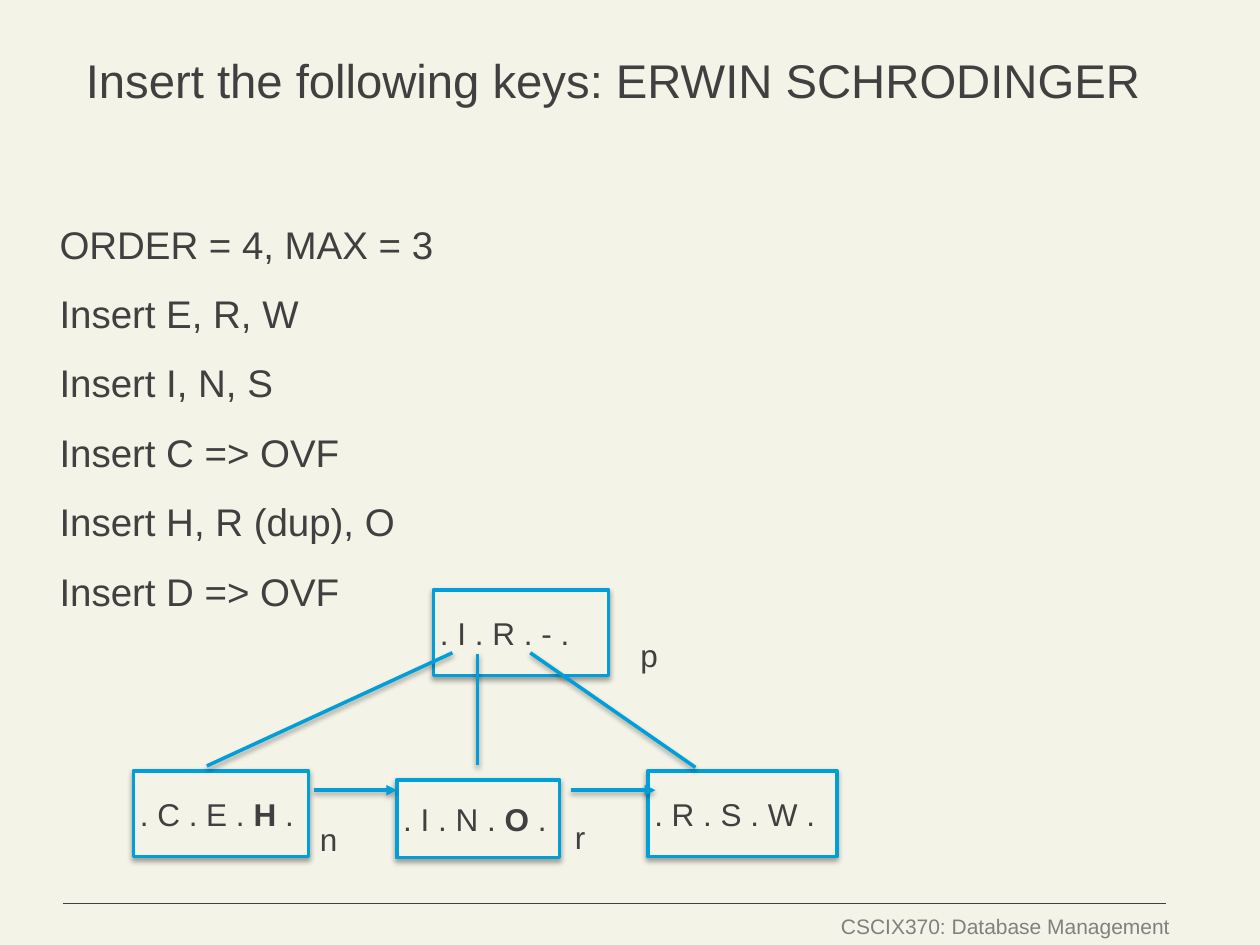
from dataclasses import dataclass

from lxml import etree
from pptx import Presentation
from pptx.dml.color import RGBColor
from pptx.enum.shapes import MSO_CONNECTOR, MSO_SHAPE
from pptx.enum.text import MSO_ANCHOR, MSO_AUTO_SIZE, PP_ALIGN
from pptx.oxml.ns import qn
from pptx.util import Cm, Pt

RECTANGLE, STRAIGHT = MSO_SHAPE.RECTANGLE, MSO_CONNECTOR.STRAIGHT
TOP, MIDDLE = MSO_ANCHOR.TOP, MSO_ANCHOR.MIDDLE
LEFT, RIGHT = PP_ALIGN.LEFT, PP_ALIGN.RIGHT
NO_RESIZE = MSO_AUTO_SIZE.NONE


@dataclass(frozen=True)
class Theme:
    font: str = "Arial"
    paper: RGBColor = RGBColor(0xF3, 0xF3, 0xE7)
    ink: RGBColor = RGBColor(0x40, 0x40, 0x40)
    muted: RGBColor = RGBColor(0x80, 0x80, 0x80)
    accent: RGBColor = RGBColor(0x00, 0x9F, 0xDA)
    title_size: float = 27
    body_size: float = 22
    node_size: float = 18
    footer_size: float = 12
    edge_width: float = 2
    rule_width: float = 0.75


@dataclass(frozen=True)
class Node:
    """A tree node; one key may be bold. Lengths in centimetres."""
    left: float
    top: float
    width: float
    height: float
    keys: str
    bold_key: str = ""


@dataclass(frozen=True)
class Edge:
    x1: float
    y1: float
    x2: float
    y2: float
    arrow: bool = False


@dataclass(frozen=True)
class Label:
    left: float
    top: float
    width: float
    text: str


THEME = Theme()
STEPS = ["ORDER = 4, MAX = 3", "Insert E, R, W", "Insert I, N, S",
         "Insert C => OVF", "Insert H, R (dup), O", "Insert D => OVF"]
NODES = [
    Node(2.69, 15.54, 3.53, 1.73, ". C . E . H .", "H"),
    Node(13.06, 15.54, 3.81, 1.73, ". R . S . W ."),
    Node(8.74, 11.89, 3.53, 1.73, ". I . R . - ."),
    Node(8, 15.72, 3.28, 1.57, ". I . N . O .", "O"),
]
EDGES = [
    # Parent to child
    Edge(4.17, 15.44, 9.12, 13.16),
    Edge(14.02, 15.47, 10.69, 13.16),
    Edge(9.63, 15.42, 9.63, 13.18),
    # Leaf to next leaf
    Edge(6.32, 15.93, 8, 15.93, arrow=True),
    Edge(11.51, 15.93, 13.21, 15.93, arrow=True),
]
LABELS = [Label(6.32, 16.41, 0.64, "n"), Label(12.78, 12.7, 0.64, "p"),
          Label(11.46, 16.36, 0.51, "r")]


def write(frame, lines: list[str], *, size: float, color=THEME.ink, align=LEFT,
          anchor=TOP, wrap=True, gap: float = 0, spacing: float = 1,
          bold_part: str = "") -> None:
    """Fill a text frame, one paragraph per line."""
    frame.word_wrap = wrap
    frame.auto_size = NO_RESIZE
    frame.vertical_anchor = anchor
    frame.margin_left = frame.margin_right = Cm(0.13)
    frame.margin_top = frame.margin_bottom = Cm(0.13)
    for index, line in enumerate(lines):
        para = frame.add_paragraph() if index else frame.paragraphs[0]
        properties = para._p.get_or_add_pPr()
        properties.set("marL", "0")
        properties.set("indent", "0")
        etree.SubElement(properties, qn("a:buNone"))
        para.alignment = align
        para.line_spacing = spacing
        para.space_before = Pt(gap if index else 0)
        before, bold, after = line.partition(bold_part) if bold_part else (line, "", "")
        for text, is_bold in ((before, False), (bold, True), (after, False)):
            if text:
                span = para.add_run()
                span.text = text
                span.font.name = THEME.font
                span.font.size = Pt(size)
                span.font.bold = is_bold
                span.font.color.rgb = color


def set_effects(shape, shadow: bool) -> None:
    """Replace the inherited effects by a soft drop shadow, or by none."""
    properties = shape._element.spPr
    effects = properties.find(qn("a:effectLst"))
    if effects is None:
        effects = etree.SubElement(properties, qn("a:effectLst"))
    if shadow:
        outer = etree.SubElement(effects, qn("a:outerShdw"), blurRad=str(Pt(3)),
                                 dist=str(Pt(1.8)), dir="5400000", rotWithShape="0")
        black = etree.SubElement(outer, qn("a:srgbClr"), val="000000")
        etree.SubElement(black, qn("a:alpha"), val="35000")


def add_line(page, edge: Edge, *, color=THEME.accent,
             width: float = THEME.edge_width, shadow: bool = True) -> None:
    line = page.shapes.add_connector(STRAIGHT, Cm(edge.x1), Cm(edge.y1),
                                     Cm(edge.x2), Cm(edge.y2))
    line.line.color.rgb = color
    line.line.width = Pt(width)
    if edge.arrow:
        etree.SubElement(line.line._get_or_add_ln(), qn("a:tailEnd"), type="triangle")
    set_effects(line, shadow)


def add_node(page, node: Node) -> None:
    box = page.shapes.add_shape(RECTANGLE, Cm(node.left), Cm(node.top),
                                Cm(node.width), Cm(node.height))
    box.fill.solid()
    box.fill.fore_color.rgb = THEME.paper
    box.line.color.rgb = THEME.accent
    box.line.width = Pt(THEME.edge_width)
    box.shadow.inherit = False
    set_effects(box, shadow=True)
    write(box.text_frame, [node.keys], size=THEME.node_size, anchor=MIDDLE,
          bold_part=node.bold_key)


def add_label(page, label: Label) -> None:
    box = page.shapes.add_textbox(Cm(label.left), Cm(label.top), Cm(label.width), Cm(0.97))
    write(box.text_frame, [label.text], size=THEME.node_size, wrap=False)


def place(shape, left: float, top: float, width: float, height: float) -> None:
    shape.left, shape.top = Cm(left), Cm(top)
    shape.width, shape.height = Cm(width), Cm(height)


def main() -> None:
    deck = Presentation()
    deck.slide_width, deck.slide_height = Cm(25.4), Cm(19.05)
    page = deck.slides.add_slide(deck.slide_layouts[1])
    page.background.fill.solid()
    page.background.fill.fore_color.rgb = THEME.paper

    # Footer
    add_line(page, Edge(23.5, 18.21, 1.27, 18.21), color=THEME.ink,
             width=THEME.rule_width, shadow=False)
    footer = page.shapes.add_textbox(Cm(16.79), Cm(18.29), Cm(6.93), Cm(0.74))
    write(footer.text_frame, ["CSCIX370: Database Management"], size=THEME.footer_size,
          color=THEME.muted, align=RIGHT, wrap=False)

    # Title and list of insertions
    title, body = page.shapes.title, page.placeholders[1]
    place(title, 1.6, 0.79, 23.7, 2.84)
    write(title.text_frame, ["Insert the following keys: ERWIN SCHRODINGER"],
          size=THEME.title_size, spacing=1.1)
    place(body, 1.07, 4.27, 21.82, 13.13)
    write(body.text_frame, STEPS, size=THEME.body_size, gap=12, spacing=1.05)

    # Tree
    for node in NODES:
        add_node(page, node)
    for edge in EDGES:
        add_line(page, edge)
    for label in LABELS:
        add_label(page, label)

    deck.save("out.pptx")


if __name__ == "__main__":
    main()
